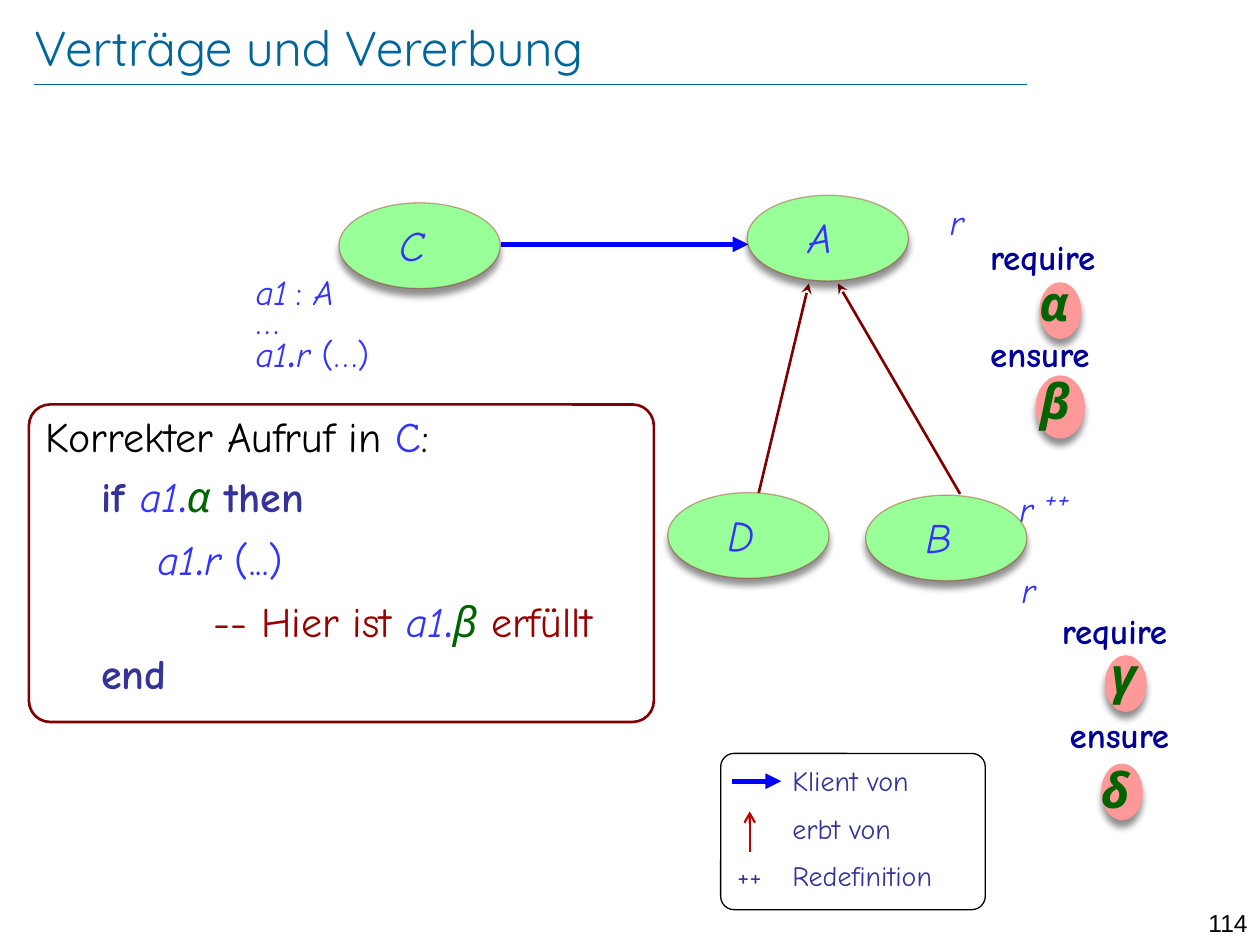
import pptx
import pptx.dml.color
import pptx.enum.shapes
import pptx.enum.text
import pptx.oxml
import pptx.oxml.ns
import pptx.util
from lxml import etree

Inches, Pt = pptx.util.Inches, pptx.util.Pt
SHAPE = pptx.enum.shapes.MSO_SHAPE
ANCHOR = pptx.enum.text.MSO_ANCHOR
ALIGN = pptx.enum.text.PP_ALIGN
qn = pptx.oxml.ns.qn


def rgb(value):
    return pptx.dml.color.RGBColor.from_string(value)


def lengths(*values):
    return [Inches(v) for v in values]


class Diagram:
    font = "Comic Neue"
    # name: colour, bold, italic
    styles = {
        "plain": ("000000", False, False),
        "name": ("3333FF", False, True),
        "sign": ("3333FF", False, False),
        "word": ("333399", True, False),
        "label": ("333399", False, False),
        "clause": ("000099", True, False),
        "greek": ("006400", False, True),
        "assertion": ("006400", True, True),
        "comment": ("990000", False, False),
        "title": ("006699", False, False),
    }

    def __init__(self, s):
        self.s = s

    def fill_text(self, tf, paragraphs, size, font=None, align=ALIGN.LEFT,
                  before=0, spacing=None, insets=(0.1, 0.05)):
        """Fill a frame; each paragraph is a list of (text, style[, size])."""
        tf.word_wrap = True
        tf.vertical_anchor = ANCHOR.TOP
        tf.margin_left = tf.margin_right = Inches(insets[0])
        tf.margin_top = tf.margin_bottom = Inches(insets[1])
        for i, runs in enumerate(paragraphs):
            p = tf.add_paragraph() if i else tf.paragraphs[0]
            p.alignment = align
            p.space_before = Pt(before if i else 0)
            if spacing:
                p.line_spacing = spacing[min(i, len(spacing) - 1)]
            for text, style, *own_size in runs:
                r = p.add_run()
                r.text = text
                colour, r.font.bold, r.font.italic = self.styles[style]
                r.font.color.rgb = rgb(colour)
                r.font.name = font or self.font
                r.font.size = Pt(own_size[0] if own_size else size)

    def text(self, box, paragraphs, size, **options):
        sp = self.s.shapes.add_textbox(*lengths(*box))
        self.fill_text(sp.text_frame, paragraphs, size, **options)
        return sp.text_frame

    def ellipse(self, box, fill, line=None):
        sp = self.s.shapes.add_shape(SHAPE.OVAL, *lengths(*box))
        sp.fill.solid()
        sp.fill.fore_color.rgb = rgb(fill)
        if line:
            sp.line.color.rgb = rgb(line)
            sp.line.width = Pt(0.75)
            colour = sp.line._get_or_add_ln().find(".//" + qn("a:srgbClr"))
            etree.SubElement(colour, qn("a:alpha"), val="34000")
        else:
            sp.line.fill.background()
        sp.shadow.inherit = False
        effects = sp._element.spPr.find(qn("a:effectLst"))
        shadow = etree.SubElement(
            effects, qn("a:outerShdw"), blurRad=str(Pt(4)), dist=str(Pt(4)),
            dir="5400000", rotWithShape="0")
        colour = etree.SubElement(shadow, qn("a:srgbClr"), val="000000")
        etree.SubElement(colour, qn("a:alpha"), val="43000")

    def class_node(self, name, x, y):
        self.ellipse((x, y, 1.28, 0.68), "99FF99", "990000")
        self.text((x - 0.12, y + 0.09, 1.4, 0.48), [[(name, "name")]], 24,
                  align=ALIGN.CENTER, insets=(0.04, 0.04))

    def frame(self, box, radius, colour, width):
        sp = self.s.shapes.add_shape(SHAPE.ROUNDED_RECTANGLE, *lengths(*box))
        sp.adjustments[0] = radius
        sp.fill.background()
        sp.line.color.rgb = rgb(colour)
        sp.line.width = Pt(width)
        sp.shadow.inherit = False
        return sp.text_frame

    def line(self, start, end, colour, width, head=None):
        cx = self.s.shapes.add_connector(
            pptx.enum.shapes.MSO_CONNECTOR.STRAIGHT, *lengths(*start, *end))
        cx.line.color.rgb = rgb(colour)
        cx.line.width = Pt(width)
        if head:
            etree.SubElement(cx.line._get_or_add_ln(), qn("a:tailEnd"), type=head)
        etree.SubElement(cx._element.spPr, qn("a:effectLst"))


def main():
    prs = pptx.Presentation()
    prs.slide_width, prs.slide_height = lengths(10, 7.5)
    d = Diagram(prs.slides.add_slide(prs.slide_layouts[6]))

    d.line((0.27, 0.67), (8.15, 0.67), "006699", 0.25)
    d.text((9.45, 7.16, 0.55, 0.24), [[("114", "plain")]], 14,
           font="Arial", align=ALIGN.RIGHT)
    title = d.text((0.27, 0.13, 8.69, 0.48),
                   [[("Verträge und Vererbung", "title")]], 28,
                   font="Quicksand", insets=(0, 0))
    title.vertical_anchor = ANCHOR.MIDDLE

    # Contracts of A and B
    for box in [(8.22, 2.98, 0.39, 0.5), (8.25, 2.24, 0.33, 0.45),
                (8.74, 6.06, 0.33, 0.45), (8.77, 5.2, 0.33, 0.45)]:
        d.ellipse(box, "FF9999")
    for text, x, y in [("r", 7.44, 1.54), ("r", 8.01, 4.46)]:
        d.text((x, y, 1.26, 0.43), [[(text, "name")]], 20)
    for text, x, y in [("require", 7.76, 1.82), ("ensure", 7.76, 2.59),
                       ("require", 8.33, 4.79), ("ensure", 8.39, 5.61)]:
        d.text((x, y, 1.49, 0.43), [[(text, "clause")]], 20)
    for text, x, y in [("α", 8.15, 2.11), ("β", 8.16, 2.89),
                       ("γ", 8.72, 5.07), ("δ", 8.64, 5.98)]:
        d.text((x, y, 0.55, 0.57), [[(text, "assertion")]], 28)

    # Client code next to C
    d.text((1.93, 2.1, 1.5, 0.43),
           [[("a1", "name"), (" ", "name", 14), (": ", "sign"), ("A", "name")]], 20)
    d.text((1.93, 2.57, 1.42, 0.5),
           [[("a1", "name"), (".", "sign", 32), ("r ", "name"), ("(…)", "sign")]],
           20, spacing=[0.7])
    d.text((1.93, 2.33, 1.02, 0.43), [[("…", "sign")]], 20)

    # Correct call
    target = [("a1", "name"), (".", "sign", 32)]
    call = d.frame((0.23, 3.21, 4.96, 2.52), 0.067, "800000", 1.5)
    d.fill_text(call, [
        [("Korrekter Aufruf in ", "plain"), ("C", "sign"), (":", "plain")],
        [("    ", "sign"), ("if ", "word"), *target, ("α ", "greek"), ("then", "word")],
        [("        ", "sign"), *target, ("r", "name"), (" (...)", "sign")],
        [("            ", "sign"), ("-- Hier ist ", "comment"), *target,
         ("β ", "greek"), ("erfüllt", "comment")],
        [("    ", "sign"), ("end", "word")],
    ], 24, before=5, spacing=[1, 0.8], insets=(0.08, 0))

    # Class graph
    d.line((3.98, 1.94), (5.94, 1.94), "0000FF", 3, "triangle")
    d.line((7.62, 3.92), (6.65, 2.25), "800000", 1.5, "stealth")
    d.line((6.02, 3.92), (6.42, 2.25), "800000", 1.5, "stealth")
    redefined = d.text((8.09, 3.76, 1.15, 0.33),
                       [[("r ", "name"), ("++", "name", 28)]], 20, insets=(0, 0))
    redefined.paragraphs[0].runs[1].font._element.set("baseline", "30000")
    for name, x, y in [("C", 2.69, 1.61), ("A", 5.93, 1.55),
                       ("D", 5.3, 3.91), ("B", 6.87, 3.93)]:
        d.class_node(name, x, y)

    # Legend
    legend = d.frame((5.72, 5.98, 2.1, 1.24), 0.086, "000000", 0.75)
    d.fill_text(legend, [[(text, "label")] for text in
                         ("Klient von", "erbt von", "++\tRedefinition")], 16, before=8)
    for p in legend.paragraphs:
        hanging = "\t" in p.text
        pPr = p._p.get_or_add_pPr()
        pPr.set("marL", str(Inches(0.44)))
        pPr.set("indent", str(Inches(-0.44 if hanging else 0)))
    d.line((5.95, 6.76), (5.95, 6.44), "C00000", 1.25, "arrow")
    d.line((5.81, 6.2), (6.2, 6.2), "0000FF", 3, "triangle")

    prs.save("out.pptx")


if __name__ == "__main__":
    main()
